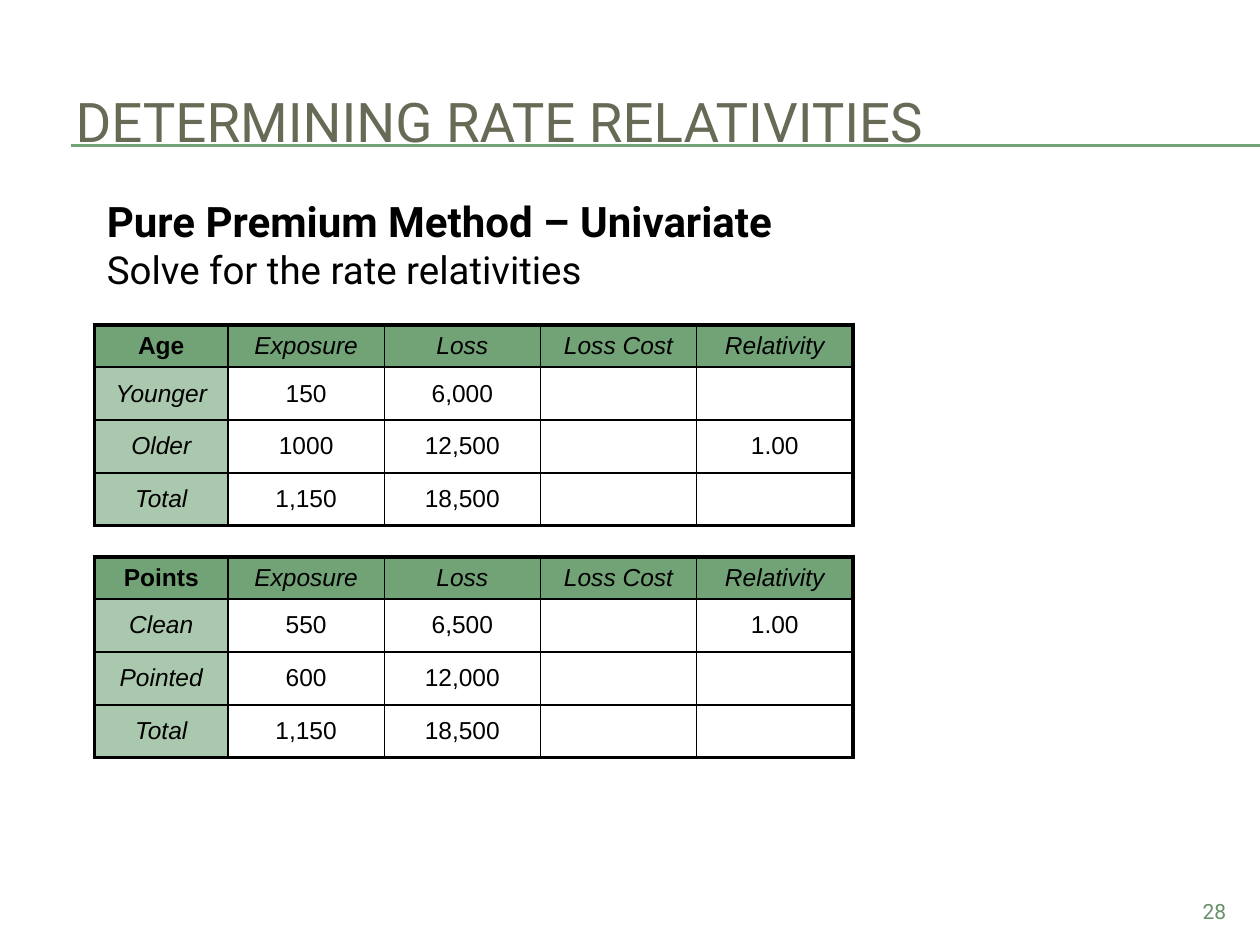
"""Build the slide on solving for univariate rate relativities."""
from dataclasses import dataclass

from lxml.etree import SubElement
from pptx import Presentation
from pptx.dml.color import RGBColor
from pptx.enum.shapes import MSO_CONNECTOR
from pptx.enum.text import MSO_ANCHOR, PP_ALIGN
from pptx.oxml.ns import qn
from pptx.slide import Slide
from pptx.table import _Cell as Cell
from pptx.text.text import TextFrame
from pptx.util import Emu, Pt

EMU_PER_PX = 9144
BLACK, GREEN, PALE_GREEN = "000000", "72A376", "AAC8AD"
COLUMN_WIDTHS = (106, 124, 124, 124, 124)
ROW_HEIGHTS = (33, 42, 42, 42)
HEADINGS = ("Exposure", "Loss", "Loss Cost", "Relativity")
THIN, THICK = 1, 2.25


@dataclass(frozen=True)
class Line:
    text: str
    size: float
    color: str
    bold: bool = False
    align: PP_ALIGN = PP_ALIGN.LEFT


@dataclass(frozen=True)
class RatingTable:
    factor: str
    top: int
    rows: tuple[tuple[str, ...], ...]


RATING_TABLES = (
    RatingTable("Age", 258, (
        ("Younger", "150", "6,000", "", ""),
        ("Older", "1000", "12,500", "", "1.00"),
        ("Total", "1,150", "18,500", "", ""),
    )),
    RatingTable("Points", 442, (
        ("Clean", "550", "6,500", "", "1.00"),
        ("Pointed", "600", "12,000", "", ""),
        ("Total", "1,150", "18,500", "", ""),
    )),
)


def px(length: int) -> Emu:
    """Turn pixels into EMU."""
    return Emu(length * EMU_PER_PX)


def rgb(color: str) -> RGBColor:
    """Turn a hex string into a colour."""
    return RGBColor.from_string(color)


def write_lines(frame: TextFrame, *lines: Line) -> None:
    """Fill a text frame with one paragraph per line."""
    frame.word_wrap = True
    for index, line in enumerate(lines):
        para = frame.add_paragraph() if index else frame.paragraphs[0]
        para.text = line.text
        para.alignment = line.align
        para.font.name = "Roboto"
        para.font.size = Pt(line.size)
        para.font.bold = line.bold
        para.font.color.rgb = rgb(line.color)


def add_title(page: Slide, line: Line) -> None:
    """Place and format the title."""
    title = page.shapes.title
    title.left, title.top, title.width, title.height = map(px, (50, 50, 950, 92))
    title.text_frame.vertical_anchor = MSO_ANCHOR.MIDDLE
    write_lines(title.text_frame, line)


def add_text(page: Slide, bounds: tuple[int, ...], *lines: Line) -> None:
    """Add a text box holding the given lines."""
    box = page.shapes.add_textbox(*map(px, bounds))
    write_lines(box.text_frame, *lines)


def add_rule(page: Slide, top: int) -> None:
    """Draw a thin green rule out to the right edge."""
    rule = page.shapes.add_connector(
        MSO_CONNECTOR.STRAIGHT, px(56), px(top), px(1000), px(top))
    rule.line.color.rgb = rgb(GREEN)
    rule.line.width = Pt(0.75)
    SubElement(rule._element.spPr, qn("a:effectLst"))


def set_borders(cell: Cell, **widths: float) -> None:
    """Draw black borders on the sides L, R, T and B, in that order."""
    properties = cell._tc.get_or_add_tcPr()
    for side, width in widths.items():
        border = SubElement(properties, qn(f"a:ln{side}"), w=str(Pt(width)))
        fill = SubElement(border, qn("a:solidFill"))
        SubElement(fill, qn("a:srgbClr"), val=BLACK)


def format_cell(cell: Cell, row: int, column: int) -> None:
    """Style a cell by its place in the table."""
    last_row, last_column = len(ROW_HEIGHTS) - 1, len(COLUMN_WIDTHS) - 1
    set_borders(
        cell,
        L=THIN if column else THICK,
        R=THICK if column == last_column else THIN,
        T=THIN if row else THICK,
        B=THICK if row == last_row else THIN,
    )
    if row and column:
        cell.fill.background()
    else:
        cell.fill.solid()
        cell.fill.fore_color.rgb = rgb(PALE_GREEN if row else GREEN)
    cell.vertical_anchor = MSO_ANCHOR.MIDDLE
    para = cell.text_frame.paragraphs[0]
    para.alignment = PP_ALIGN.CENTER
    para.font.name = "Arial"
    para.font.size = Pt(14)
    para.font.color.rgb = rgb(BLACK)
    para.font.bold = row == column == 0
    para.font.italic = (row == 0) != (column == 0)


def add_rating_table(page: Slide, rating: RatingTable) -> None:
    """Add the table of one rating factor."""
    rows = ((rating.factor, *HEADINGS), *rating.rows)
    table = page.shapes.add_table(
        len(ROW_HEIGHTS), len(COLUMN_WIDTHS), px(75), px(rating.top),
        px(sum(COLUMN_WIDTHS)), px(sum(ROW_HEIGHTS))).table
    table.first_row = table.horz_banding = False
    for column, width in zip(table.columns, COLUMN_WIDTHS):
        column.width = px(width)
    for row, height in zip(table.rows, ROW_HEIGHTS):
        row.height = px(height)
    for row_index, values in enumerate(rows):
        for column_index, value in enumerate(values):
            cell = table.cell(row_index, column_index)
            cell.text = value
            format_cell(cell, row_index, column_index)


def main() -> None:
    """Build and save the deck."""
    deck = Presentation()
    deck.slide_width, deck.slide_height = px(1000), px(750)
    page = deck.slides.add_slide(deck.slide_layouts[5])
    for top in (115, 116):
        add_rule(page, top)
    add_title(page, Line("DETERMINING RATE RELATIVITIES", 31.2, "676A55"))
    add_text(
        page, (75, 150, 583, 88),
        Line("Pure Premium Method – Univariate", 24, BLACK, bold=True),
        Line("Solve for the rate relativities", 22, BLACK))
    add_text(page, (900, 708, 83, 27), Line("28", 12, "659068", align=PP_ALIGN.RIGHT))
    for rating in RATING_TABLES:
        add_rating_table(page, rating)
    deck.save("out.pptx")


if __name__ == "__main__":
    main()
